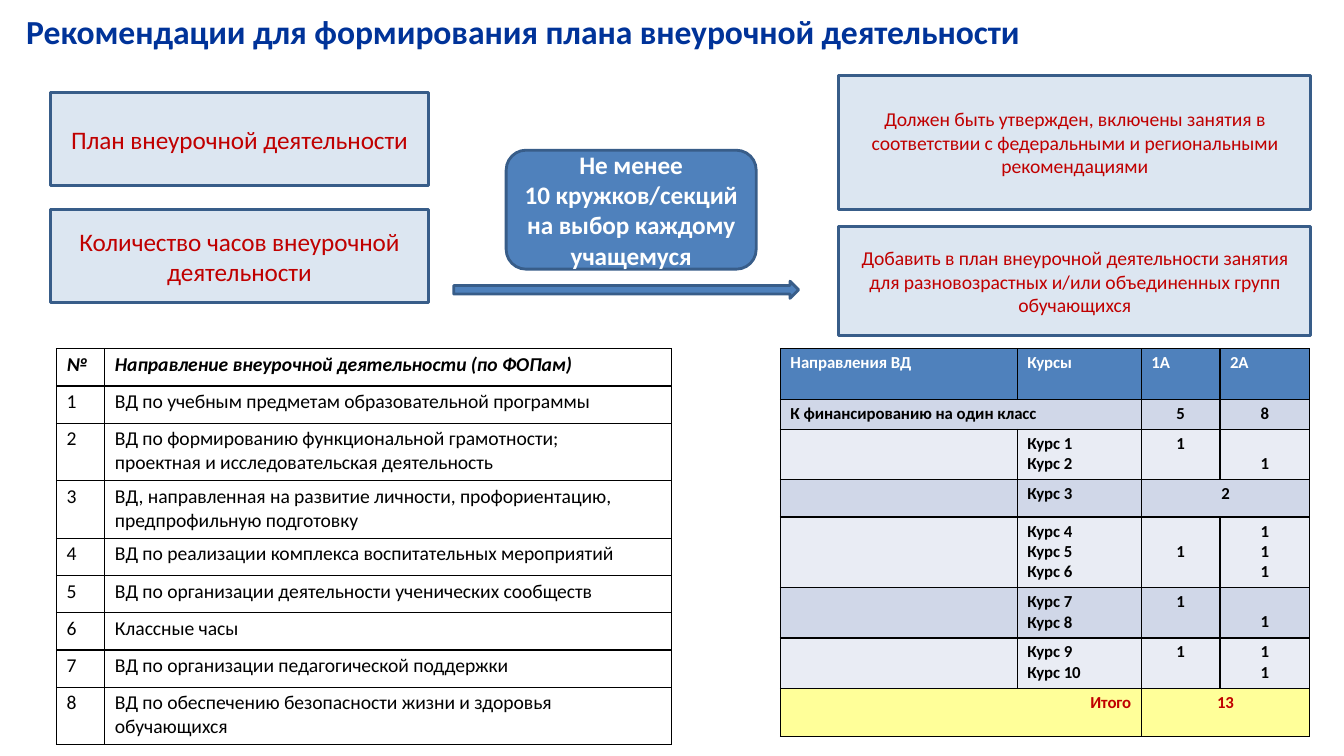
from pptx import Presentation
from pptx.dml.color import RGBColor
from pptx.enum.shapes import MSO_SHAPE
from pptx.enum.text import MSO_ANCHOR, MSO_AUTO_SIZE, PP_ALIGN
from pptx.oxml import parse_xml
from pptx.oxml.ns import nsdecls
from pptx.util import Inches, Pt

TITLE = "Рекомендации для формирования плана внеурочной деятельности"
CARDS = [
    ((0.5, 0.92, 3.75, 0.92), 18, "План внеурочной деятельности"),
    ((0.5, 2.08, 3.75, 0.92), 18, "Количество часов внеурочной деятельности"),
    ((8.32, 0.75, 4.68, 1.33), 14, "Должен быть утвержден, включены занятия в соответствии "
     "с федеральными и региональными рекомендациями"),
    ((8.32, 2.25, 4.68, 1.08), 14, "Добавить в план внеурочной деятельности занятия "
     "для разновозрастных и/или объединенных групп обучающихся"),
]
ARROW = (4.5, 2.79, 3.42, 0.17)
BADGE = (5.02, 1.49, 2.48, 1.18)
GOAL = "Не менее\n10 кружков/секций на выбор каждому учащемуся"

AREAS = [
    "ВД по учебным предметам образовательной программы",
    "ВД по формированию функциональной грамотности; проектная и исследовательская деятельность",
    "ВД, направленная на развитие личности, профориентацию, предпрофильную подготовку",
    "ВД по реализации комплекса воспитательных мероприятий",
    "ВД по организации деятельности ученических сообществ",
    "Классные часы",
    "ВД по организации педагогической поддержки",
    "ВД по обеспечению безопасности жизни и здоровья обучающихся",
]
AREA_COLS = [0.48, 5.62]
AREA_ROWS = [0.37, 0.37, 0.57, 0.57, 0.37, 0.37, 0.37, 0.37, 0.57]

HOURS = [
    ["Направления ВД", "Курсы", "1А", "2А"],
    ["К финансированию на один класс", None, "5", "8"],
    ["", "Курс 1\nКурс 2", "1", "1"],
    ["", "Курс 3", "2", None],
    ["", "Курс 4\nКурс 5\nКурс 6", "1", "1\n1\n1"],
    ["", "Курс 7\nКурс 8", "1", "1"],
    ["", "Курс 9\nКурс 10", "1", "1\n1"],
    ["Итого", None, "13", None],
]
HOUR_COLS = [2.35, 1.23, 0.78, 0.89]
HOUR_ROWS = [0.5, 0.3, 0.5, 0.37, 0.7, 0.5, 0.5, 0.48]
LOW = {(2, 3): MSO_ANCHOR.BOTTOM, (4, 2): MSO_ANCHOR.MIDDLE, (5, 3): MSO_ANCHOR.BOTTOM}

HEX = {"title": "003399", "card": "DCE6F1", "edge": "385D89", "blue": "4F81BC",
       "red": "C00000", "white": "FFFFFF", "black": "000000",
       "dark": "D0D7E8", "light": "E9ECF4", "sum": "FFFF99"}
LEFT, MID, RIGHT = PP_ALIGN.LEFT, PP_ALIGN.CENTER, PP_ALIGN.RIGHT


def tint(name):
    return RGBColor.from_string(HEX[name])


def write(frame, text, size=14, color="black", bold=False, italic=False, align=LEFT):
    frame.word_wrap = True
    for num, line in enumerate(text.split("\n")):
        para = frame.add_paragraph() if num else frame.paragraphs[0]
        para.alignment = align
        run = para.add_run()
        run.text = line
        font = run.font
        font.name, font.size = "Calibri", Pt(size)
        font.bold, font.italic = bold, italic
        font.color.rgb = tint(color)
        run._r.get_or_add_rPr().set("spc", "-5")


def draw(kind, box, fill, text="", inset=0.15, **form):
    shape = slide.shapes.add_shape(kind, *map(Inches, box))
    shape.shadow.inherit = False
    shape.fill.solid()
    shape.fill.fore_color.rgb = tint(fill)
    shape.line.color.rgb = tint("edge")
    shape.line.width = Pt(2)
    if text:
        frame = shape.text_frame
        frame.margin_left = frame.margin_right = Inches(inset)
        frame.margin_top = frame.margin_bottom = 0
        frame.vertical_anchor = MSO_ANCHOR.MIDDLE
        write(frame, text, align=MID, **form)


def grid(left, top, cols, rows):
    area = map(Inches, (left, top, sum(cols), sum(rows)))
    table = slide.shapes.add_table(len(rows), len(cols), *area).table
    table.first_row = table.horz_banding = False
    for col, width in zip(table.columns, cols):
        col.width = Inches(width)
    for row, height in zip(table.rows, rows):
        row.height = Inches(height)
    return table


def cell_set(cell, text, fill=None, right=0.0, **form):
    cell.margin_left, cell.margin_right = Inches(0.1), Inches(right)
    cell.margin_top, cell.margin_bottom = Inches(0.04 if text else 0), 0
    if fill:
        cell.fill.solid()
        cell.fill.fore_color.rgb = tint(fill)
    else:
        cell.fill.background()
    props = cell._tc.get_or_add_tcPr()
    for spot, side in enumerate("LRTB"):
        props.insert(spot, parse_xml(
            f'<a:ln{side} {nsdecls("a")} w="12700"><a:solidFill>'
            f'<a:srgbClr val="{HEX["black"]}"/></a:solidFill></a:ln{side}>'))
    write(cell.text_frame, text, **form)


def fill_areas():
    table = grid(0.56, 3.46, AREA_COLS, AREA_ROWS)
    lines = [("№", "Направление внеурочной деятельности (по ФОПам)")]
    lines += [(str(num), area) for num, area in enumerate(AREAS, 1)]
    for row, line in enumerate(lines):
        for col, text in enumerate(line):
            cell_set(table.cell(row, col), text, right=0.5 * col,
                     bold=row == 0, italic=row == 0)


def fill_hours():
    table = grid(7.74, 3.46, HOUR_COLS, HOUR_ROWS)
    last = len(HOURS) - 1
    for row, line in enumerate(HOURS):
        fill = {0: "blue", last: "sum"}.get(row, "dark" if row % 2 else "light")
        color = {0: "white", last: "red"}.get(row, "black")
        for col, text in enumerate(line):
            cell = table.cell(row, col)
            align = LEFT if row == 0 or col < 2 else MID
            if row == last and col == 0:
                align = RIGHT
            side = 0.1 if align != LEFT else 0
            cell_set(cell, text or "", fill, side, size=12, color=color,
                     bold=True, align=align)
            if (row, col) in LOW:
                cell.vertical_anchor = LOW[row, col]
                cell.margin_top = 0
                cell.margin_bottom = Inches(0.06 if LOW[row, col] == MSO_ANCHOR.BOTTOM else 0.02)
            if text is None:
                table.cell(row, col - 1).merge(cell)


deck = Presentation()
deck.slide_width, deck.slide_height = Inches(13.33), Inches(7.5)
slide = deck.slides.add_slide(deck.slide_layouts[5])

head = slide.shapes.title
head.left, head.top, head.width, head.height = map(Inches, (0.26, 0.08, 10.4, 0.45))
frame = head.text_frame
frame.margin_left = frame.margin_right = frame.margin_top = frame.margin_bottom = 0
frame.auto_size = MSO_AUTO_SIZE.NONE
frame.vertical_anchor = MSO_ANCHOR.MIDDLE
write(frame, TITLE, size=24, color="title", bold=True)

for box, size, text in CARDS:
    draw(MSO_SHAPE.RECTANGLE, box, "card", text, size=size, color="red")
draw(MSO_SHAPE.RIGHT_ARROW, ARROW, "blue")
draw(MSO_SHAPE.ROUNDED_RECTANGLE, BADGE, "blue", GOAL, inset=0.05,
     size=18, color="white", bold=True)
fill_hours()
fill_areas()
deck.save("out.pptx")
